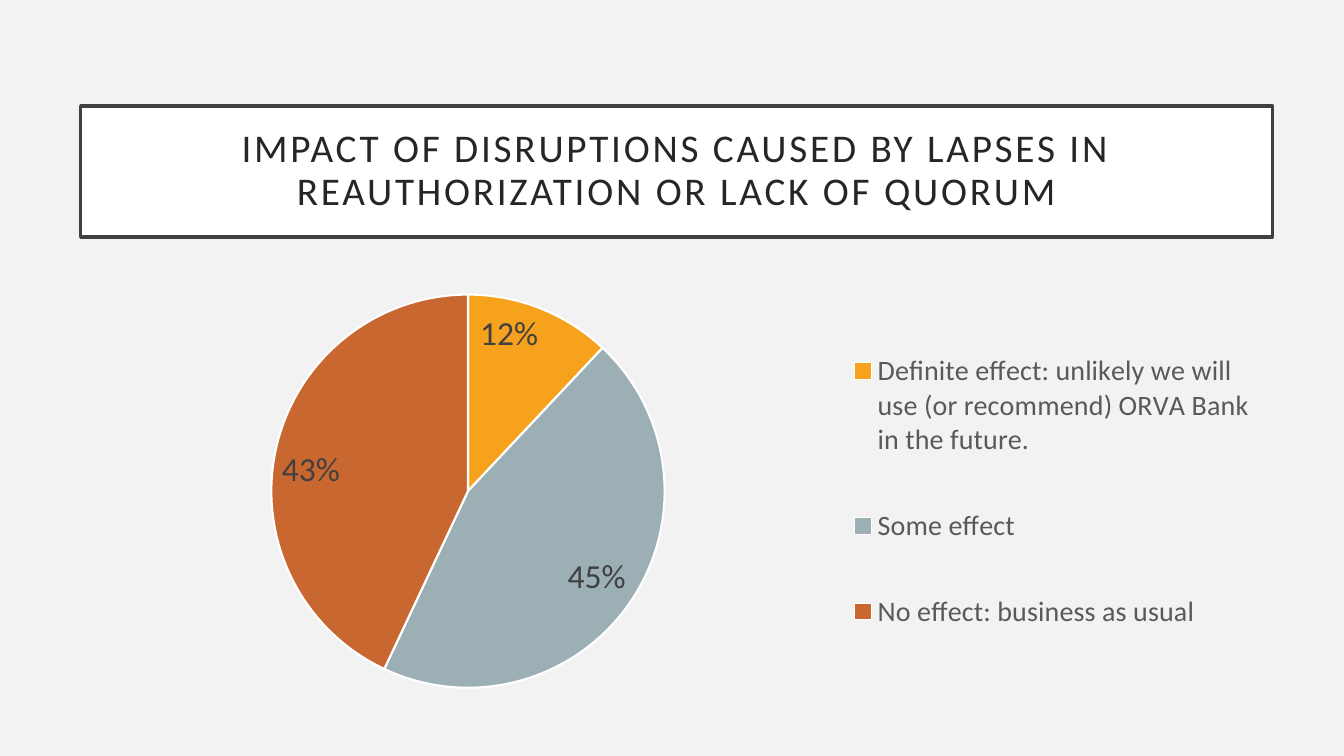
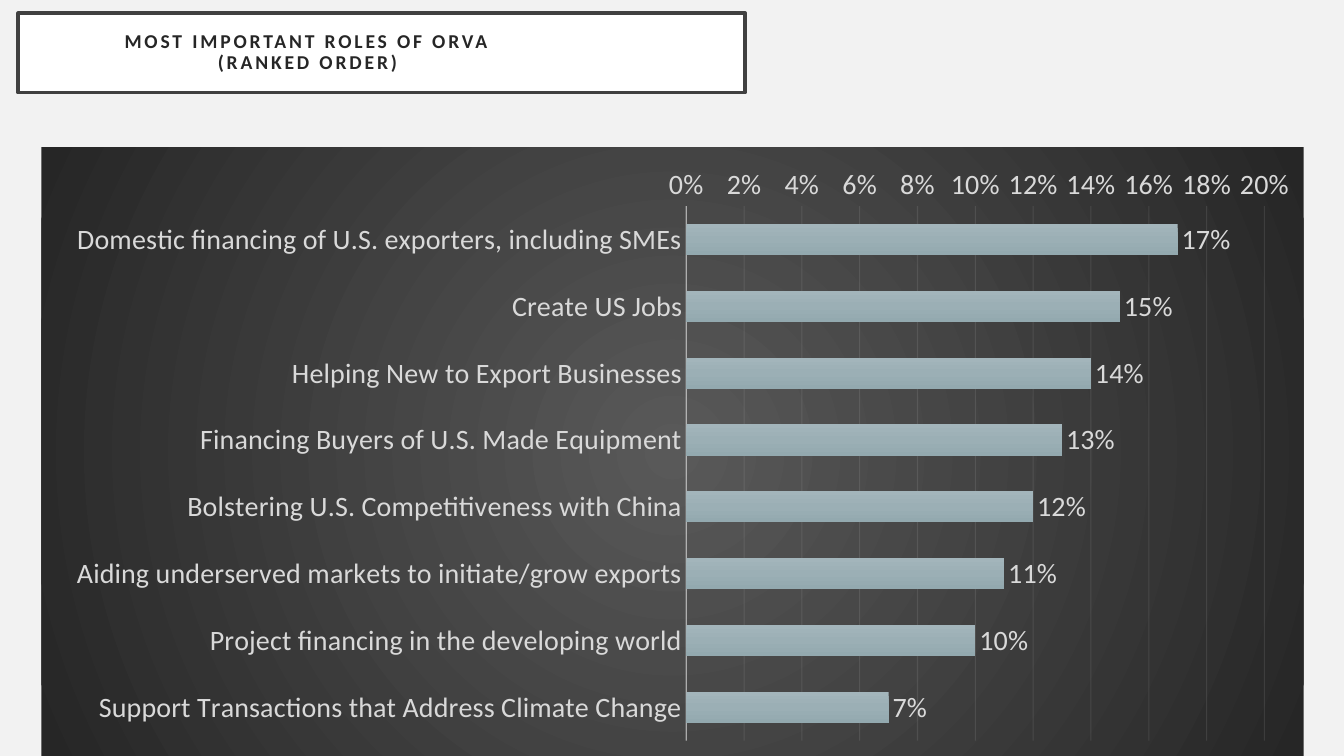
from pptx import Presentation
from pptx.chart.data import CategoryChartData
from pptx.dml.color import RGBColor
from pptx.enum.chart import XL_CHART_TYPE, XL_LABEL_POSITION, XL_LEGEND_POSITION, XL_TICK_MARK
from pptx.enum.shapes import MSO_SHAPE
from pptx.enum.text import MSO_ANCHOR, PP_ALIGN
from pptx.oxml import parse_xml
from pptx.oxml.ns import nsdecls
from pptx.util import Inches, Pt

PAPER = RGBColor(0xF2, 0xF2, 0xF2)
WHITE = RGBColor(0xFF, 0xFF, 0xFF)
INK = RGBColor(0x26, 0x26, 0x26)
FRAME = RGBColor(0x40, 0x40, 0x40)
GRAY = RGBColor(0x59, 0x59, 0x59)
SILVER = RGBColor(0xD9, 0xD9, 0xD9)
AMBER = RGBColor(0xF6, 0xA2, 0x1D)
MIST = RGBColor(0x9B, 0xAF, 0xB5)
MIST_LIGHT = RGBColor(0xA3, 0xB5, 0xBB)
MIST_DARK = RGBColor(0x93, 0xA9, 0xAF)
RUST = RGBColor(0xC9, 0x67, 0x31)
FONT = "Calibri"

IMPACT_TITLE = "IMPACT OF DISRUPTIONS CAUSED BY LAPSES IN REAUTHORIZATION OR LACK OF QUORUM"
IMPACT = [
    ("Definite effect: unlikely we will use (or recommend) ORVA Bank in the future.", 0.12, AMBER),
    ("Some effect", 0.45, MIST),
    ("No effect: business as usual", 0.43, RUST),
]
ROLES_TITLE = "MOST IMPORTANT ROLES OF ORVA\v(RANKED ORDER)"
ROLES = [
    ("Domestic financing of U.S. exporters, including SMEs", 0.17),
    ("Create US Jobs", 0.15),
    ("Helping New to Export Businesses", 0.14),
    ("Financing Buyers of U.S. Made Equipment", 0.13),
    ("Bolstering U.S. Competitiveness with China", 0.12),
    ("Aiding underserved markets to initiate/grow exports", 0.11),
    ("Project financing in the developing world", 0.10),
    ("Support Transactions that Address Climate Change", 0.07),
]


def add_page(deck):
    page = deck.slides.add_slide(deck.slide_layouts[6])
    page.background.fill.solid()
    page.background.fill.fore_color.rgb = PAPER
    return page


def style_font(font, size, color):
    font.name = FONT
    font.size = Pt(size)
    font.color.rgb = color


def add_title(page, text, bounds, size, bold=False, right_inset=0.2):
    box = page.shapes.add_shape(MSO_SHAPE.RECTANGLE, *map(Inches, bounds))
    box.shadow.inherit = False
    box.fill.solid()
    box.fill.fore_color.rgb = WHITE
    box.line.color.rgb = FRAME
    box.line.width = Pt(2.5)
    frame = box.text_frame
    frame.word_wrap = True
    frame.vertical_anchor = MSO_ANCHOR.MIDDLE
    frame.margin_left = frame.margin_top = frame.margin_bottom = Inches(0.2)
    frame.margin_right = Inches(right_inset)
    para = frame.paragraphs[0]
    para.text = text
    para.alignment = PP_ALIGN.CENTER
    para.line_spacing = 0.9
    for span in para.runs:
        style_font(span.font, size, INK)
        span.font.bold = bold
        span.font._element.set("spc", "200")


def add_chart(page, kind, rows, bounds):
    data = CategoryChartData(number_format="0%")
    data.categories = [row[0] for row in rows]
    data.add_series("Series 1", [row[1] for row in rows])
    chart = page.shapes.add_chart(kind, *map(Inches, bounds), data).chart
    chart.has_title = False
    chart.has_legend = False
    style_font(chart.font, 10, RGBColor(0, 0, 0))
    return chart


def add_labels(plot, size, color, position):
    plot.has_data_labels = True
    labels = plot.data_labels
    labels.show_value = True
    labels.number_format = "0%"
    labels.number_format_is_linked = False
    labels.position = position
    style_font(labels.font, size, color)


def layout_xml(left, top, width, height, target=""):
    """Manual layout in fractions of the chart area."""
    return parse_xml(
        f'<c:layout {nsdecls("c")}><c:manualLayout>{target}'
        '<c:xMode val="edge"/><c:yMode val="edge"/>'
        f'<c:x val="{left}"/><c:y val="{top}"/><c:w val="{width}"/><c:h val="{height}"/>'
        "</c:manualLayout></c:layout>")


def place_plot(chart, *bounds):
    area = chart.element.xpath("c:chart/c:plotArea")[0]
    for old in area.xpath("c:layout"):
        area.remove(old)
    area.insert(0, layout_xml(*bounds, target='<c:layoutTarget val="inner"/>'))


def gradient_xml(stops, direction):
    marks = "".join(f'<a:gs pos="{percent * 1000}"><a:srgbClr val="{color}"/></a:gs>'
                    for percent, color in stops)
    return f'<a:gradFill {nsdecls("a")}><a:gsLst>{marks}</a:gsLst>{direction}</a:gradFill>'


def style_line(chart, line, color_query, width, opacity):
    line.color.rgb = PAPER
    line.width = Pt(width)
    color = chart.element.xpath(color_query)[0]
    color.append(parse_xml(f'<a:alpha {nsdecls("a")} val="{opacity * 1000}"/>'))


def build_impact(deck):
    page = add_page(deck)
    add_title(page, IMPACT_TITLE, (0.8, 1.05, 11.82, 1.3), 28)
    chart = add_chart(page, XL_CHART_TYPE.PIE, IMPACT, (0.8, 2.35, 11.82, 4.63))
    place_plot(chart, 0.16, 0.12, 0.33, 0.85)
    plot = chart.plots[0]
    plot.vary_by_categories = True
    add_labels(plot, 24, FRAME, XL_LABEL_POSITION.INSIDE_END)
    for index, (_, _, color) in enumerate(IMPACT):
        part = plot.series[0].points[index].format
        part.fill.solid()
        part.fill.fore_color.rgb = color
        part.line.color.rgb = WHITE
        part.line.width = Pt(1.5)
    chart.has_legend = True
    legend = chart.legend
    legend.position = XL_LEGEND_POSITION.RIGHT
    legend.include_in_layout = False
    style_font(legend.font, 20, GRAY)
    element = chart.element.xpath("c:chart/c:legend")[0]
    for old in element.xpath("c:layout"):
        element.remove(old)
    element.xpath("c:legendPos")[0].addnext(layout_xml(0.64, 0.14, 0.35, 0.81))


def build_roles(deck):
    page = add_page(deck)
    add_title(page, ROLES_TITLE, (0.18, 0.13, 7.21, 0.79), 14, bold=True, right_inset=1.67)
    chart = add_chart(page, XL_CHART_TYPE.BAR_CLUSTERED, ROLES, (0.41, 1.46, 12.52, 6.04))
    place_plot(chart, 0.511, 0.097, 0.458, 0.878)
    glow = gradient_xml(
        [(0, GRAY), (100, INK)],
        '<a:path path="circle"><a:fillToRect l="50000" t="50000" r="50000" b="50000"/></a:path>')
    chart.element.xpath("c:chart")[0].addnext(parse_xml(
        f'<c:spPr {nsdecls("c", "a")}>{glow}<a:ln><a:noFill/></a:ln></c:spPr>'))

    plot = chart.plots[0]
    plot.vary_by_categories = False
    plot.gap_width = 115
    plot.overlap = -20
    add_labels(plot, 20, SILVER, XL_LABEL_POSITION.OUTSIDE_END)
    plot.series[0].format.line.fill.background()
    bar_fill = gradient_xml([(0, MIST_LIGHT), (50, MIST), (100, MIST_DARK)],
                            '<a:lin ang="5400000" scaled="0"/>')
    chart.element.xpath(".//c:ser/c:spPr")[0].insert(0, parse_xml(bar_fill))

    roles, shares = chart.category_axis, chart.value_axis
    for axis in (roles, shares):
        axis.major_tick_mark = axis.minor_tick_mark = XL_TICK_MARK.NONE
        style_font(axis.tick_labels.font, 20, SILVER)
    roles.reverse_order = True
    style_line(chart, roles.format.line, ".//c:catAx/c:spPr//a:srgbClr", 1, 54)
    shares.minimum_scale, shares.maximum_scale, shares.major_unit = 0, 0.2, 0.02
    shares.tick_labels.number_format = "0%"
    shares.tick_labels.number_format_is_linked = False
    shares.format.line.fill.background()
    shares.has_major_gridlines = True
    style_line(chart, shares.major_gridlines.format.line,
               ".//c:majorGridlines//a:srgbClr", 0.75, 10)


def main():
    deck = Presentation()
    deck.slide_width, deck.slide_height = Inches(13.33), Inches(7.5)
    build_impact(deck)
    build_roles(deck)
    deck.save("out.pptx")


if __name__ == "__main__":
    main()
